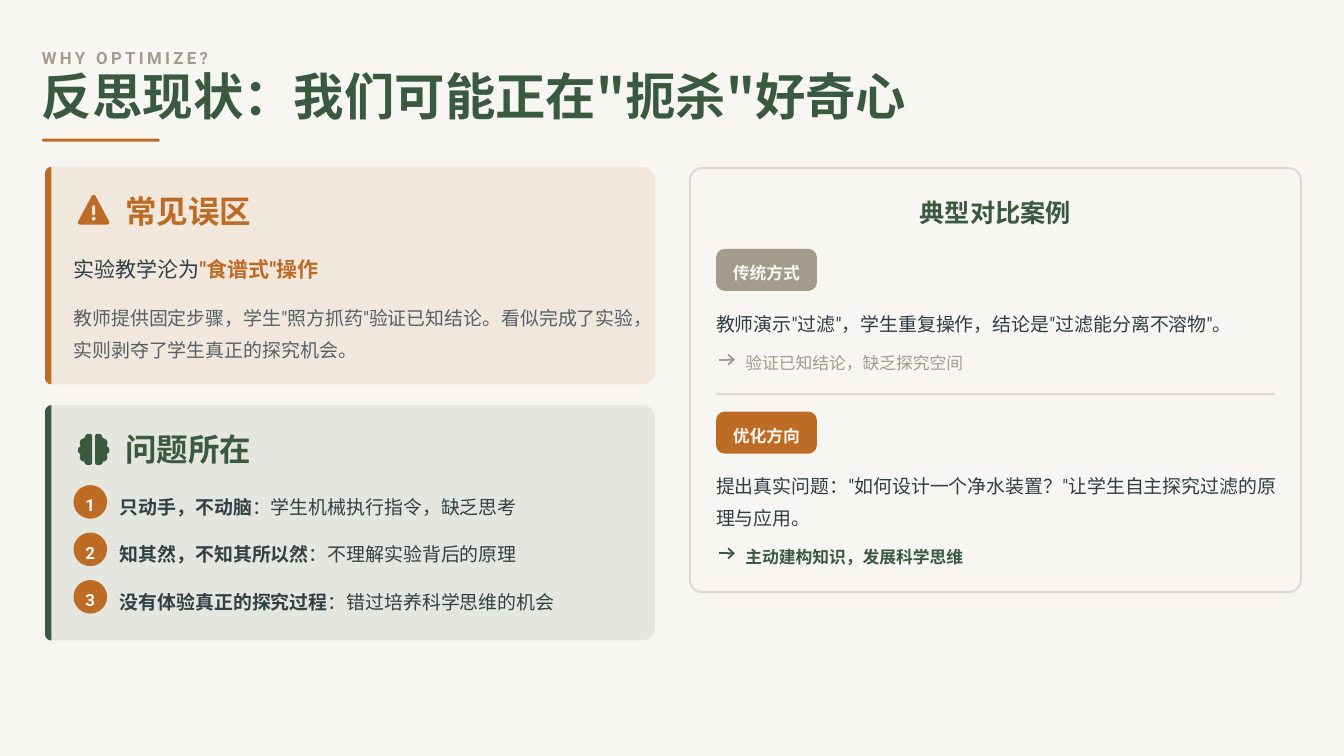
from math import cos, radians, sin

from lxml.etree import SubElement
from pptx import Presentation
from pptx.dml.color import RGBColor
from pptx.enum.shapes import MSO_CONNECTOR, MSO_SHAPE
from pptx.enum.text import MSO_ANCHOR, MSO_AUTO_SIZE, PP_ALIGN
from pptx.oxml.ns import qn
from pptx.util import Pt

HUES = {
    "paper": "F8F6F2", "green": "3A5A40", "rust": "BC6C25",
    "sand": "A39B8B", "ink": "2F3E46", "blush": "F2E8DE",
}
HAN, LATIN = "Noto Sans CJK SC", "Roboto"


def hue(name):
    return RGBColor.from_string(HUES[name])


def fade(node, share):
    """Give every plain colour below the node an opacity in percent."""
    for clr in node.iter(qn("a:srgbClr")):
        SubElement(clr, qn("a:alpha")).set("val", str(share * 1000))


def place(item, x, y, w, h):
    item.left, item.top, item.width, item.height = Pt(x), Pt(y), Pt(w), Pt(h)


def write(item, paras, size=18, color="ink", bold=False, font=LATIN, lead=1.4,
          align=PP_ALIGN.LEFT, gap=0, share=None, track=None, wrap=True):
    """Fill an item; a paragraph is a string or a list of (text, changes)."""
    frame = item.text_frame
    frame.word_wrap = wrap
    frame.auto_size = MSO_AUTO_SIZE.NONE
    frame.vertical_anchor = MSO_ANCHOR.MIDDLE
    frame.margin_left = frame.margin_right = 0
    frame.margin_top = frame.margin_bottom = 0
    for i, runs in enumerate([paras] if isinstance(paras, str) else paras):
        para = frame.add_paragraph() if i else frame.paragraphs[0]
        props = para._p.get_or_add_pPr()
        props.set("marL", "0")
        props.set("indent", "0")
        SubElement(props, qn("a:buNone"))
        para.alignment, para.line_spacing = align, lead
        para.space_before = Pt(gap if i else 0)
        for text, change in [(runs, {})] if isinstance(runs, str) else runs:
            run = para.add_run()
            run.text = text
            run.font.size = Pt(size)
            run.font.bold = change.get("bold", bold)
            run.font.name = font
            run.font.color.rgb = hue(change.get("color", color))
            mark = run._r.get_or_add_rPr()
            SubElement(mark, qn("a:ea")).set("typeface", font)
            if share:
                fade(mark, share)
            if track:
                mark.set("spc", str(track))


def label(slide, x, y, w, h, paras, **form):
    box = slide.shapes.add_textbox(Pt(x), Pt(y), Pt(w), Pt(h))
    write(box, paras, **form)


def paint(item, color, share=None):
    item.shadow.inherit = False
    item.fill.solid()
    item.fill.fore_color.rgb = hue(color)
    item.line.fill.background()
    if share:
        fade(item._element.spPr, share)
    return item


def block(slide, x, y, w, h, color, round=0):
    """Rectangle with a corner radius in points."""
    kind = MSO_SHAPE.ROUNDED_RECTANGLE if round else MSO_SHAPE.RECTANGLE
    item = slide.shapes.add_shape(kind, Pt(x), Pt(y), Pt(w), Pt(h))
    if round:
        item.adjustments[0] = round / min(w, h)
    return paint(item, color)


def disc(slide, x, y, size, color):
    item = slide.shapes.add_shape(MSO_SHAPE.OVAL, Pt(x), Pt(y), Pt(size), Pt(size))
    return paint(item, color)


def arc(x, y, r, start, end, steps=10):
    turns = [radians(start + (end - start) * i / steps) for i in range(steps + 1)]
    return [(x + r * cos(t), y + r * sin(t)) for t in turns]


def form(slide, spots, color, share=None):
    spots = [(Pt(x), Pt(y)) for x, y in spots]
    maker = slide.shapes.build_freeform(*spots[0])
    maker.add_line_segments(spots[1:], close=True)
    return paint(maker.convert_to_shape(), color, share)


def line(slide, x, y, end, color, share=None, head=False):
    item = slide.shapes.add_connector(MSO_CONNECTOR.STRAIGHT, Pt(x), Pt(y), Pt(end), Pt(y))
    item.line.width = Pt(2)
    item.line.color.rgb = hue(color)
    props = item._element.spPr
    if share:
        fade(props, share)
    if head:
        tip = SubElement(props.find(qn("a:ln")), qn("a:tailEnd"))
        for key, val in (("type", "arrow"), ("w", "lg"), ("len", "med")):
            tip.set(key, val)
    SubElement(props, qn("a:effectLst"))


def card(slide, y, h, color, name):
    """Tinted card with a solid left edge and a heading."""
    x, w, base = 43, 581, y + h
    left = arc(x + 6, base - 6, 6, 90, 180) + arc(x + 6, y + 6, 6, 180, 270)
    right = arc(x + w - 12, y + 12, 12, -90, 0) + arc(x + w - 12, base - 12, 12, 0, 90)
    form(slide, left + right, color, share=10)
    form(slide, left, color)
    label(slide, 119.5, y + 24, 135, 36, name, size=30, color=color,
          bold=True, font=HAN, lead=1)


def alert(slide, x, y):
    """Warning sign around a centre point."""
    sign = form(slide, [(x, y - 13), (x + 13, y + 11.5), (x - 13, y + 11.5)], "rust")
    sign.line.color.rgb = hue("rust")
    sign.line.width = Pt(4)
    SubElement(sign._element.spPr.find(qn("a:ln")), qn("a:round"))
    block(slide, x - 1.4, y - 5, 2.8, 9.5, "blush", round=1.4)
    disc(slide, x - 1.8, y + 6, 3.6, "blush")


def brain(slide, x, y):
    """Two mirrored lobed halves around a centre point."""
    lobes = [
        (-3.5, -12.8, 2, -90, 0), (-3.5, 12.8, 2, 0, 90),
        (-5.7, 11.8, 3, 90, 160), (-9, 7.4, 4.2, 90, 215),
        (-11, 0.7, 4, 120, 250), (-8.6, -6, 4.6, 145, 260),
        (-5, -11.7, 3.1, 180, 270),
    ]
    half = [spot for lobe in lobes for spot in arc(*lobe)]
    for side in (1, -1):
        form(slide, [(x + side * dx, y + dy) for dx, dy in half], "green")


def case(slide, y, name, color, text, lines, note, tone, bold):
    """Badge, description and arrow note of one teaching approach."""
    badge = block(slide, 682, y, 96, 40, color, round=8)
    write(badge, name, size=16, color="paper", bold=True, lead=1.3, align=PP_ALIGN.CENTER)
    label(slide, 682, y + 52, 541, 29.5 * lines, text)
    foot = y + 64 + 29.5 * lines
    line(slide, 684.5, foot + 12, 700, tone, head=True)
    label(slide, 710, foot, 216, 24, note, size=16, color=tone, bold=bold,
          lead=1.3, wrap=False)


def main():
    deck = Presentation()
    deck.slide_width, deck.slide_height = Pt(1280), Pt(720)
    slide = deck.slides.add_slide(deck.slide_layouts[1])
    slide.background.fill.solid()
    slide.background.fill.fore_color.rgb = hue("paper")

    # Heading
    label(slide, 40, 40, 1208, 24, "WHY OPTIMIZE?", size=16, color="sand",
          bold=True, lead=1.3, track=320)
    title = slide.shapes.title
    place(title, 40, 72, 1224, 48)
    write(title, '反思现状：我们可能正在"扼杀"好奇心', size=48, color="green",
          bold=True, font=HAN, lead=0.8)
    block(slide, 40, 132, 112, 3, "rust", round=1.5)

    # Common mistakes
    card(slide, 159, 207, "rust", "常见误区")
    alert(slide, 89.2, 200.5)
    label(slide, 70, 235, 540, 33,
          [[("实验教学沦为", {}), ('"食谱式"操作', {"color": "rust", "bold": True})]], size=20)
    label(slide, 70, 284, 539, 59,
          '教师提供固定步骤，学生"照方抓药"验证已知结论。看似完成了实验，实则剥夺了学生真正的探究机会。',
          share=80)

    # Where the problem lies
    card(slide, 386, 224, "green", "问题所在")
    brain(slide, 89.2, 428)
    faults = [
        ("只动手，不动脑", "：学生机械执行指令，缺乏思考"),
        ("知其然，不知其所以然", "：不理解实验背后的原理"),
        ("没有体验真正的探究过程", "：错过培养科学思维的机会"),
    ]
    for i in range(len(faults)):
        dot = disc(slide, 70, 462 + 45.2 * i, 32, "rust")
        write(dot, str(i + 1), size=16, color="paper", bold=True, lead=1.3,
              align=PP_ALIGN.CENTER)
    body = slide.placeholders[1]
    place(body, 114, 462, 480, 123.4)
    write(body, [[(head, {"bold": True}), (rest, {})] for head, rest in faults], gap=15)

    # Comparison of two approaches
    panel = block(slide, 657, 160, 582, 404, "paper", round=12)
    panel.line.color.rgb = hue("sand")
    panel.line.width = Pt(2)
    fade(panel._element.spPr.find(qn("a:ln")), 30)
    label(slide, 676, 185, 544, 32, "典型对比案例", size=24, color="green", bold=True,
          font=HAN, lead=1.1, align=PP_ALIGN.CENTER)
    case(slide, 237, "传统方式", "sand",
         '教师演示"过滤"，学生重复操作，结论是"过滤能分离不溶物"。', 1,
         "验证已知结论，缺乏探究空间", "sand", False)
    line(slide, 682, 375.5, 1214, "sand", share=30)
    case(slide, 392, "优化方向", "rust",
         '提出真实问题："如何设计一个净水装置？"让学生自主探究过滤的原理与应用。', 2,
         "主动建构知识，发展科学思维", "green", True)

    deck.save("out.pptx")


if __name__ == "__main__":
    main()
